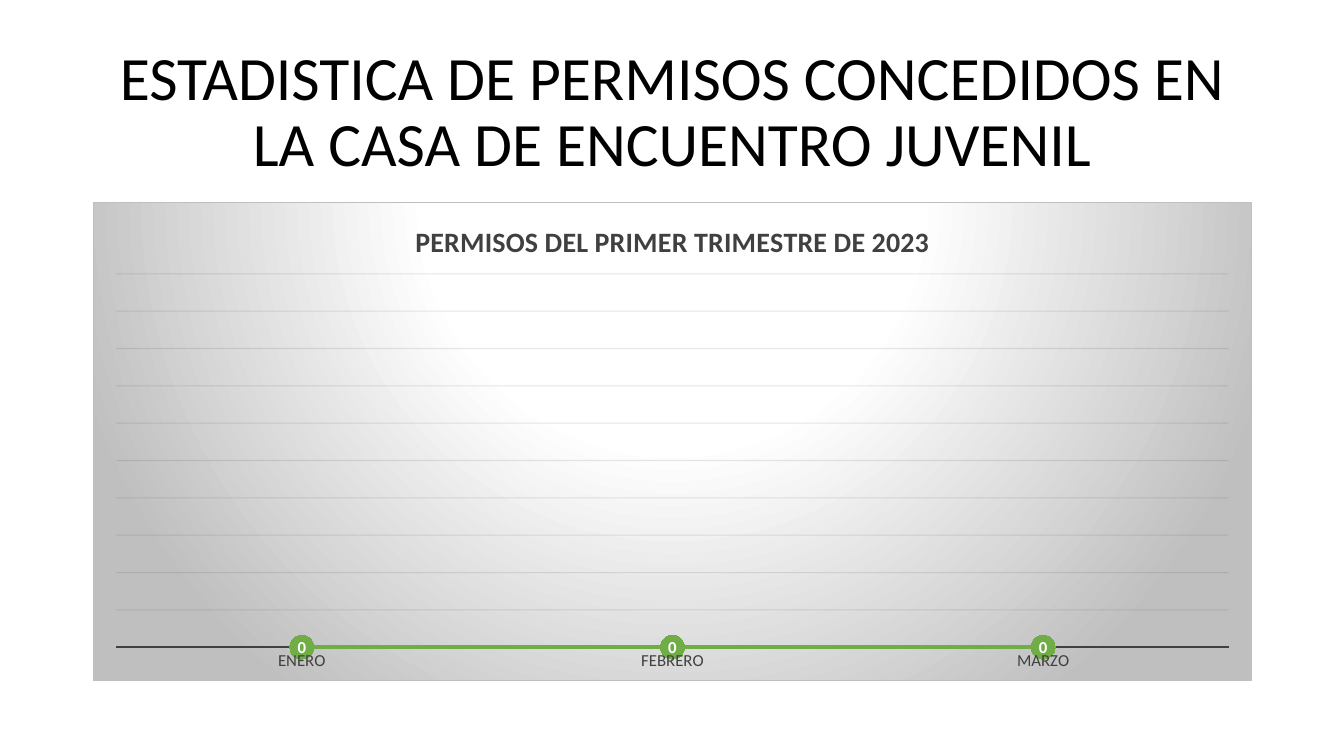
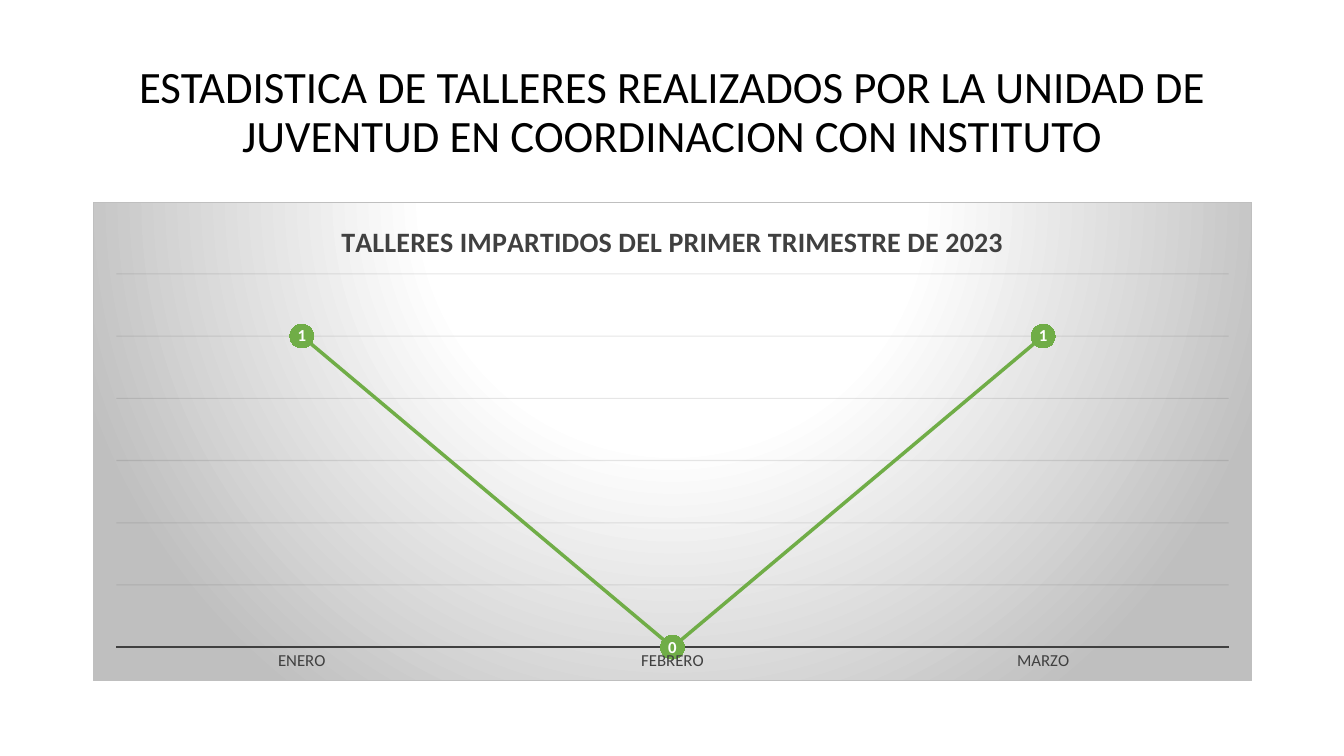
from lxml import etree
from pptx import Presentation
from pptx.chart.data import CategoryChartData
from pptx.dml.color import RGBColor
from pptx.enum import chart as ch, text
from pptx.oxml import parse_xml
from pptx.oxml.ns import nsdecls, qn
from pptx.util import Inches, Pt

# Content
MONTHS = ("ENERO", "FEBRERO", "MARZO")
SLIDES = [
    dict(heading="ESTADISTICA DE PERMISOS CONCEDIDOS EN LA CASA DE ENCUENTRO JUVENIL",
         size=44, chart_title="PERMISOS DEL PRIMER TRIMESTRE DE 2023",
         counts=(0, 0, 0), top=1, step=0.1),
    dict(heading="ESTADISTICA DE TALLERES REALIZADOS POR LA UNIDAD DE JUVENTUD "
                 "EN COORDINACION CON INSTITUTO",
         size=32, chart_title="TALLERES IMPARTIDOS DEL PRIMER TRIMESTRE DE 2023",
         counts=(1, 0, 1), top=1.2, step=0.2),
]

# Shared style
FONT = "Calibri"
BLACK = RGBColor(0, 0, 0)
WHITE = RGBColor(0xFF, 0xFF, 0xFF)
DARK = RGBColor(0x40, 0x40, 0x40)
GRID = RGBColor(0x0D, 0x0D, 0x0D)
GREEN = RGBColor(0x70, 0xAD, 0x47)
SILVER = RGBColor(0xBF, 0xBF, 0xBF)
LEFT, WIDTH = Inches(0.92), Inches(11.5)
HEADING_TOP, HEADING_HEIGHT = Inches(0.4), Inches(1.45)
CHART_TOP, CHART_HEIGHT = Inches(2), Inches(4.76)
PLOT = dict(x=0.02, y=0.15, w=0.96, h=0.78)  # shares of the chart area
GRADIENT_STOPS = ((0, WHITE), (39, WHITE), (100, SILVER))


def style_font(font, size, color, bold=False):
    font.name, font.size, font.bold = FONT, Pt(size), bold
    font.color.rgb = color


def style_line(line, color, width):
    line.color.rgb, line.width = color, Pt(width)


def add_heading(slide, wording, size):
    frame = slide.shapes.add_textbox(LEFT, HEADING_TOP, WIDTH, HEADING_HEIGHT).text_frame
    frame.word_wrap = True
    frame.vertical_anchor = text.MSO_ANCHOR.MIDDLE
    frame.text = wording
    paragraph = frame.paragraphs[0]
    paragraph.alignment = text.PP_ALIGN.CENTER
    paragraph.line_spacing = 0.9
    style_font(paragraph.runs[0].font, size, BLACK)


def add_backdrop(chart):
    """Radial gradient and thin border behind the whole chart."""
    stops = "".join(f'<a:gs pos="{pos * 1000}"><a:srgbClr val="{color}"/></a:gs>'
                    for pos, color in GRADIENT_STOPS)
    backdrop = parse_xml(
        f'<c:spPr {nsdecls("c", "a")}><a:gradFill><a:gsLst>{stops}</a:gsLst>'
        '<a:path path="circle"><a:fillToRect l="50000" t="-80000" r="50000" b="180000"/>'
        f'</a:path></a:gradFill><a:ln w="{Pt(0.75)}"><a:solidFill>'
        f'<a:srgbClr val="{SILVER}"/></a:solidFill></a:ln></c:spPr>')
    chart.element.find(qn("c:chart")).addnext(backdrop)


def place_plot(chart):
    plot_area = chart.element.find(".//" + qn("c:plotArea"))
    for old in plot_area.findall(qn("c:layout")):
        plot_area.remove(old)
    shares = "".join(f'<c:{key} val="{share}"/>' for key, share in PLOT.items())
    plot_area.insert(0, parse_xml(
        f'<c:layout {nsdecls("c")}><c:manualLayout><c:layoutTarget val="inner"/>'
        f'<c:xMode val="edge"/><c:yMode val="edge"/>{shares}</c:manualLayout></c:layout>'))


def add_line_chart(slide, chart_title, counts, top, step):
    data = CategoryChartData()
    data.categories = MONTHS
    data.add_series("Series 1", counts)
    chart = slide.shapes.add_chart(ch.XL_CHART_TYPE.LINE_MARKERS, LEFT, CHART_TOP,
                                   WIDTH, CHART_HEIGHT, data).chart
    style_font(chart.font, 10, BLACK)
    chart.has_legend = False
    chart.has_title = True
    title = chart.chart_title
    title.text_frame.text = chart_title
    style_font(title.text_frame.paragraphs[0].runs[0].font, 20, DARK, bold=True)
    title.include_in_layout = False
    add_backdrop(chart)
    place_plot(chart)

    # Axes
    months = chart.category_axis
    months.major_tick_mark = months.minor_tick_mark = ch.XL_TICK_MARK.NONE
    style_font(months.tick_labels.font, 12, DARK)
    style_line(months.format.line, DARK, 1.5)
    scale = chart.value_axis
    scale.minimum_scale, scale.maximum_scale, scale.major_unit = 0, top, step
    scale.visible = False
    scale.has_major_gridlines = True
    style_line(scale.major_gridlines.format.line, GRID, 0.75)
    grid_color = scale.element_grid if hasattr(scale, "element_grid") else \
        chart.element.find(".//" + qn("c:majorGridlines")).find(".//" + qn("a:srgbClr"))
    etree.SubElement(grid_color, qn("a:alpha")).set("val", "10000")

    # Line, markers and value labels
    plot = chart.plots[0]
    plot.vary_by_categories = False
    series = plot.series[0]
    series.smooth = False
    style_line(series.format.line, GREEN, 2.5)
    series.marker.style = ch.XL_MARKER_STYLE.CIRCLE
    series.marker.size = 17
    series.marker.format.fill.solid()
    series.marker.format.fill.fore_color.rgb = GREEN
    series.marker.format.line.fill.background()
    labels = series.data_labels
    labels.show_value = True
    labels.position = ch.XL_LABEL_POSITION.CENTER
    style_font(labels.font, 12, WHITE, bold=True)


def main():
    deck = Presentation()
    deck.slide_width, deck.slide_height = Inches(13.33), Inches(7.5)
    for page in SLIDES:
        slide = deck.slides.add_slide(deck.slide_layouts[6])
        add_heading(slide, page["heading"], page["size"])
        add_line_chart(slide, page["chart_title"], page["counts"], page["top"], page["step"])
    deck.save("out.pptx")


if __name__ == "__main__":
    main()
